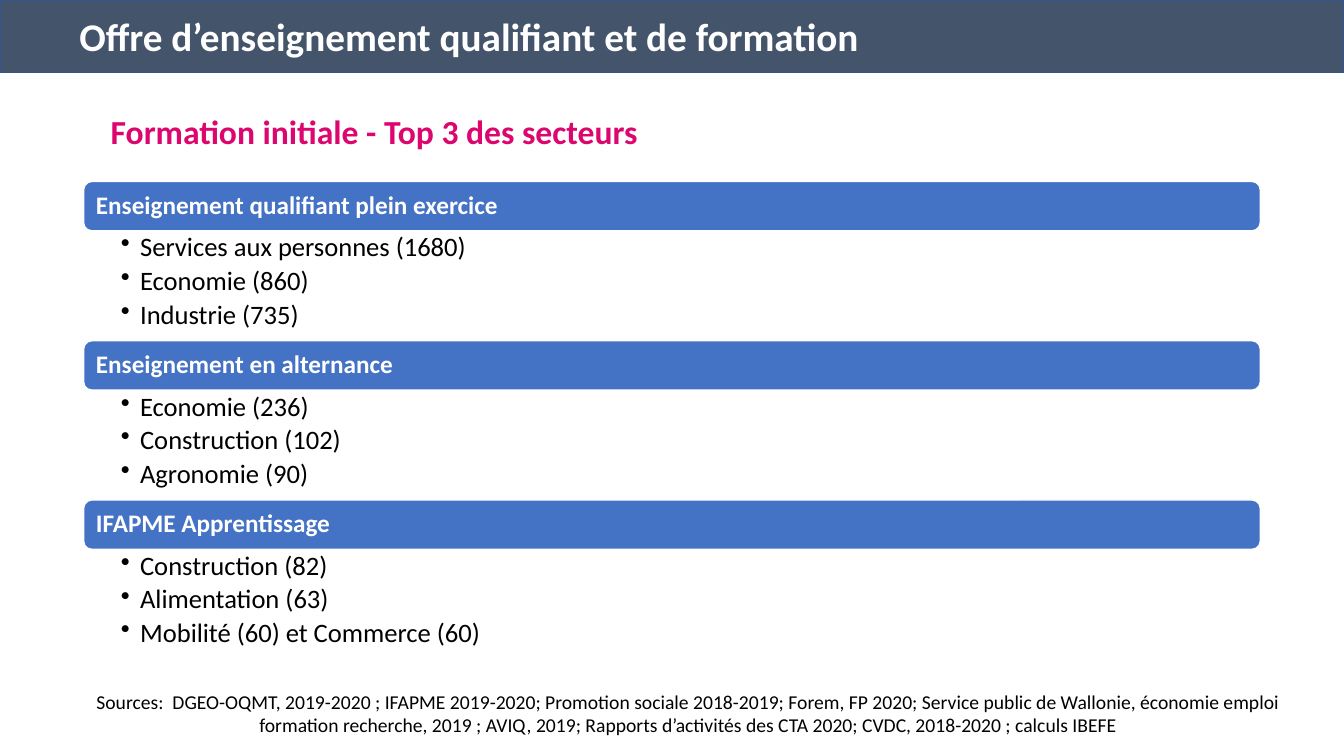
from dataclasses import dataclass

from lxml import etree
from pptx import Presentation
from pptx.dml.color import RGBColor
from pptx.enum.shapes import MSO_SHAPE
from pptx.enum.text import MSO_ANCHOR, PP_ALIGN
from pptx.oxml.ns import qn
from pptx.util import Inches, Pt

RECT, ROUNDED = MSO_SHAPE.RECTANGLE, MSO_SHAPE.ROUNDED_RECTANGLE
TOP, MIDDLE = MSO_ANCHOR.TOP, MSO_ANCHOR.MIDDLE
LEFT, CENTER = PP_ALIGN.LEFT, PP_ALIGN.CENTER


@dataclass(frozen=True)
class Theme:
    font: str = "Calibri"
    banner: str = "44546A"
    banner_line: str = "325491"
    bar: str = "4472C4"
    accent: str = "DD066F"
    white: str = "FFFFFF"
    black: str = "000000"
    title: int = 28
    subtitle: int = 24
    heading: int = 18
    item: int = 19
    source: int = 14


THEME = Theme()

SECTIONS = [
    ("Enseignement qualifiant plein exercice",
     ["Services aux personnes (1680)", "Economie (860)", "Industrie (735)"]),
    ("Enseignement en alternance",
     ["Economie (236)", "Construction (102)", "Agronomie (90)"]),
    ("IFAPME Apprentissage",
     ["Construction (82)", "Alimentation (63)", "Mobilité (60) et Commerce (60)"]),
]
SOURCES = (
    "Sources:  DGEO-OQMT, 2019-2020 ; IFAPME 2019-2020; Promotion sociale 2018-2019; "
    "Forem, FP 2020; Service public de Wallonie, économie emploi formation recherche, "
    "2019 ; AVIQ, 2019; Rapports d’activités des CTA 2020; CVDC, 2018-2020 ; "
    "calculs IBEFE"
)


def add_box(slide, kind, box, fill, line):
    sp = slide.shapes.add_shape(kind, *map(Inches, box))
    sp.shadow.inherit = False
    sp.fill.solid()
    sp.fill.fore_color.rgb = RGBColor.from_string(fill)
    sp.line.color.rgb = RGBColor.from_string(line)
    sp.line.width = Pt(1)
    return sp


def write(sp, lines, size, color, bold=False, align=LEFT, anchor=TOP,
          insets=(0.1, 0.05, 0.1, 0.05)):
    """Fill a shape with one paragraph per line and return the paragraphs."""
    tf = sp.text_frame
    tf.word_wrap = True
    tf.vertical_anchor = anchor
    tf.margin_left, tf.margin_top, tf.margin_right, tf.margin_bottom = map(Inches, insets)
    tf.text = "\n".join(lines)
    for p in tf.paragraphs:
        p.alignment = align
        font = p.runs[0].font
        font.name, font.size, font.bold = THEME.font, Pt(size), bold
        font.color.rgb = RGBColor.from_string(color)
    return tf.paragraphs


def add_text(slide, box, lines, size, color, **style):
    sp = slide.shapes.add_textbox(*map(Inches, box))
    return write(sp, lines, size, color, **style)


def set_indent(p, margin, first=0):
    pPr = p._p.get_or_add_pPr()
    pPr.set("marL", str(Inches(margin)))
    pPr.set("indent", str(Inches(first)))
    return pPr


def add_banner(slide, box, title):
    x, y, w, h = box
    add_box(slide, RECT, box, THEME.banner, THEME.banner_line)
    add_text(slide, (x + 0.69, y + 0.07, 11.86, 0.57), [title],
             THEME.title, THEME.white, bold=True)


def add_section(slide, box, heading, items):
    x, y, w, h = box
    bar_h = 0.49
    # Heading bar
    bar = add_box(slide, ROUNDED, (x, y, w, bar_h), THEME.bar, THEME.white)
    p = write(bar, [heading], THEME.heading, THEME.white, bold=True,
              anchor=MIDDLE)[0]
    p.line_spacing = 0.9
    # Bulleted sectors
    for p in add_text(slide, (x, y + bar_h, w, h - bar_h), items, THEME.item,
                      THEME.black, insets=(0.37, 0.03, 0.19, 0.03)):
        p.level = 1
        p.line_spacing = 0.9
        p.space_after = Pt(3.5)
        pPr = set_indent(p, 0.19, -0.19)
        etree.SubElement(pPr, qn("a:buChar")).set("char", "•")


def add_sections(slide, box, sections):
    x, y, w, h = box
    step = h / len(sections)
    for i, (heading, items) in enumerate(sections):
        add_section(slide, (x, y + i * step, w, step), heading, items)


def add_sources(slide, box, text):
    p = add_text(slide, box, [text], THEME.source, THEME.black, align=CENTER)[0]
    set_indent(p, 0.5)


def main():
    prs = Presentation()
    prs.slide_width, prs.slide_height = Inches(13.33), Inches(7.5)
    s = prs.slides.add_slide(prs.slide_layouts[6])

    add_banner(s, (0, 0, 13.33, 0.72), "Offre d’enseignement qualifiant et de formation")
    add_sources(s, (0.33, 6.79, 12.5, 0.71), SOURCES)
    add_text(s, (1, 1.05, 11.93, 0.5), ["Formation initiale - Top 3 des secteurs"],
             THEME.subtitle, THEME.accent, bold=True)
    add_sections(s, (0.83, 1.8, 11.67, 4.74), SECTIONS)

    prs.save("out.pptx")


if __name__ == "__main__":
    main()
